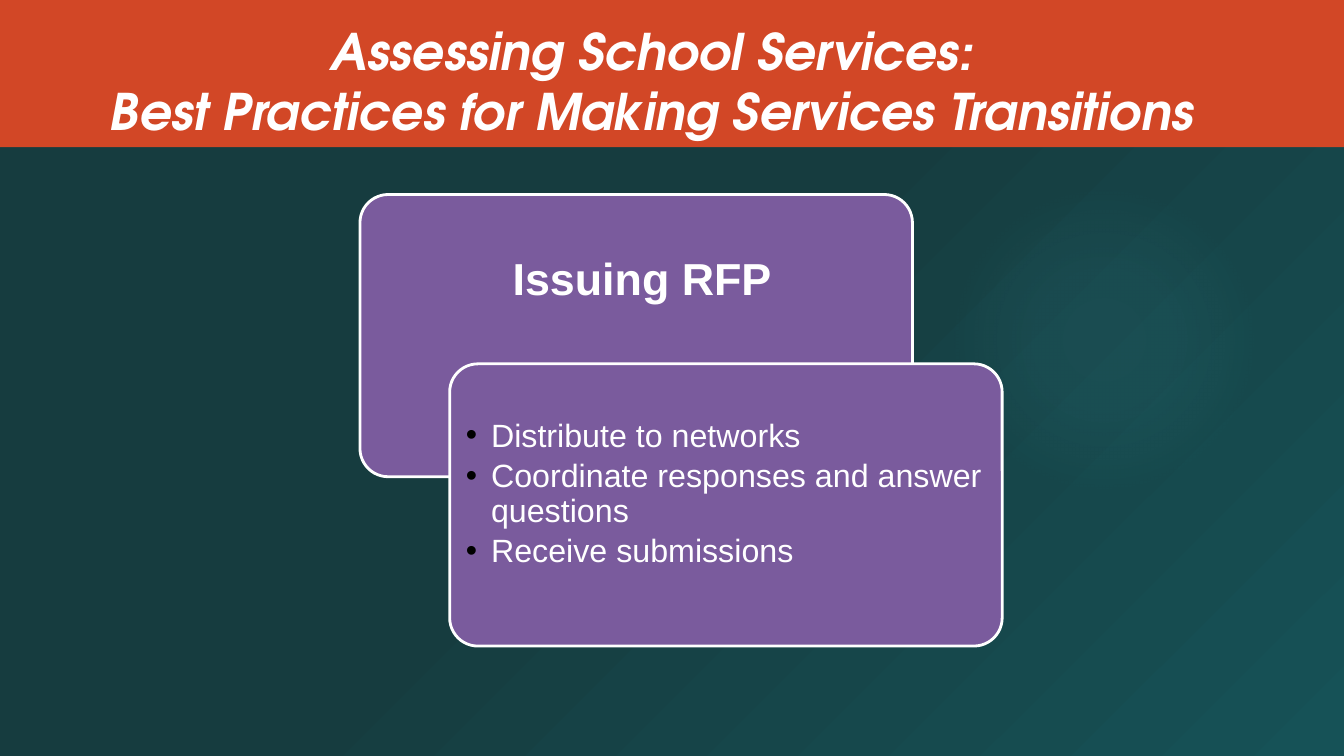
from dataclasses import dataclass

from lxml import etree
from pptx import Presentation
from pptx.dml.color import RGBColor
from pptx.enum.shapes import MSO_SHAPE
from pptx.enum.text import MSO_ANCHOR, PP_ALIGN
from pptx.oxml.ns import qn
from pptx.util import Inches, Pt

RECTANGLE, ROUNDED, OVAL = MSO_SHAPE.RECTANGLE, MSO_SHAPE.ROUNDED_RECTANGLE, MSO_SHAPE.OVAL
TOP, MIDDLE = MSO_ANCHOR.TOP, MSO_ANCHOR.MIDDLE
LEFT, CENTER = PP_ALIGN.LEFT, PP_ALIGN.CENTER

# Content
TITLE = ["Assessing School Services:", "Best Practices for Making Services Transitions"]
STEP = ["Issuing RFP"]
TASKS = [
    "Distribute to networks",
    "Coordinate responses and answer questions",
    "Receive submissions",
]


@dataclass(frozen=True)
class Theme:
    banner: str = "D24726"
    card: str = "7A5B9D"
    text: str = "FFFFFF"
    bullet: str = "000000"
    # Gradient stops: position %, colour, opacity %
    backdrop: tuple = ((0, "163C3F", 100), (48, "163C3F", 100), (100, "165257", 100))
    glow: tuple = ((0, "4CB9C3", 7), (36, "4CB9C3", 6), (69, "4CB9C3", 0), (100, "4CB9C3", 0))
    title_font: str = "TeX Gyre Adventor"
    body_font: str = "Arial"
    title_size: int = 36
    step_size: int = 32
    task_size: int = 23


THEME = Theme()

# Layout in inches
WIDTH, HEIGHT = 13.33, 7.5
BANNER_HEIGHT = 1.46
CARD_WIDTH, CARD_HEIGHT = 5.48, 2.8
CARD_LEFT, CARD_TOP = 3.57, 1.93
CARD_SHIFT = (0.89, 1.68)
CARD_PADDING = 0.08
TASKS_DROP = 0.47
BULLET_INDENT = 0.25


def add_child(parent, tag, **attributes):
    return etree.SubElement(parent, qn(tag), {key: str(value) for key, value in attributes.items()})


def radial_fill(fill, owner, stops, center):
    """Fill with a circular gradient; center holds the l, t, r, b shares in percent."""
    fill.gradient()
    gradient = owner.xpath(".//a:gradFill")[0]
    for child in list(gradient):
        gradient.remove(child)
    stop_list = add_child(gradient, "a:gsLst")
    for position, colour, opacity in stops:
        stop = add_child(stop_list, "a:gs", pos=position * 1000)
        tint = add_child(stop, "a:srgbClr", val=colour)
        if opacity < 100:
            add_child(tint, "a:alpha", val=opacity * 1000)
    path = add_child(gradient, "a:path", path="circle")
    add_child(path, "a:fillToRect", **{side: share * 1000 for side, share in zip("ltrb", center)})


def add_panel(page, kind, box, colour=None):
    panel = page.shapes.add_shape(kind, *map(Inches, box))
    panel.shadow.inherit = False
    panel.line.fill.background()
    if colour:
        panel.fill.solid()
        panel.fill.fore_color.rgb = RGBColor.from_string(colour)
    return panel


def add_text(page, box, lines, font, size, align=CENTER, anchor=MIDDLE, bold=False, italic=False):
    frame = page.shapes.add_textbox(*map(Inches, box)).text_frame
    frame.word_wrap = True
    frame.vertical_anchor = anchor
    frame.text = "\n".join(lines)
    for para in frame.paragraphs:
        para.alignment = align
        if align == LEFT:
            add_bullet(para)
        para.font.name, para.font.size = font, Pt(size)
        para.font.bold, para.font.italic = bold, italic
        para.font.color.rgb = RGBColor.from_string(THEME.text)
    return frame


def add_bullet(para):
    para.level = 1
    para.line_spacing = 0.9
    para.space_after = Pt(4)
    properties = para._p.get_or_add_pPr()
    properties.set("marL", str(Inches(BULLET_INDENT)))
    properties.set("indent", str(-Inches(BULLET_INDENT)))
    add_child(add_child(properties, "a:buClr"), "a:srgbClr", val=THEME.bullet)
    add_child(properties, "a:buFont", typeface=THEME.body_font)
    add_child(properties, "a:buChar", char="•")


def main():
    deck = Presentation()
    deck.slide_width, deck.slide_height = Inches(WIDTH), Inches(HEIGHT)
    page = deck.slides.add_slide(deck.slide_layouts[6])

    # Backdrop with a soft glow
    radial_fill(page.background.fill, page.element, THEME.backdrop, (0, 0, 100, 100))
    glow = add_panel(page, OVAL, (9.41, 1.83, 3.08, 3.08))
    radial_fill(glow.fill, glow.element, THEME.glow, (50, 50, 50, 50))

    # Title banner
    add_panel(page, RECTANGLE, (0, 0, WIDTH, BANNER_HEIGHT), THEME.banner)
    add_text(page, (0.52, 0.14, 11.89, 1.31), TITLE, THEME.title_font, THEME.title_size,
             bold=True, italic=True)

    # Two overlapping cards
    for step in range(2):
        left, top = CARD_LEFT + step * CARD_SHIFT[0], CARD_TOP + step * CARD_SHIFT[1]
        card = add_panel(page, ROUNDED, (left, top, CARD_WIDTH, CARD_HEIGHT), THEME.card)
        card.adjustments[0] = 0.1
        card.line.color.rgb = RGBColor.from_string(THEME.text)
        card.line.width = Pt(2)

    # Task list in the front card, heading in the back card
    tasks_box = (left + CARD_PADDING, top + CARD_PADDING,
                 CARD_WIDTH - 2 * CARD_PADDING, CARD_HEIGHT - 2 * CARD_PADDING)
    tasks = add_text(page, tasks_box, TASKS, THEME.body_font, THEME.task_size, LEFT, TOP)
    tasks.margin_left = tasks.margin_right = tasks.margin_bottom = Inches(CARD_PADDING)
    tasks.margin_top = Inches(TASKS_DROP)
    add_text(page, (4.39, 2.43, 3.96, 0.64), STEP, THEME.body_font, THEME.step_size, bold=True)

    deck.save("out.pptx")


if __name__ == "__main__":
    main()
